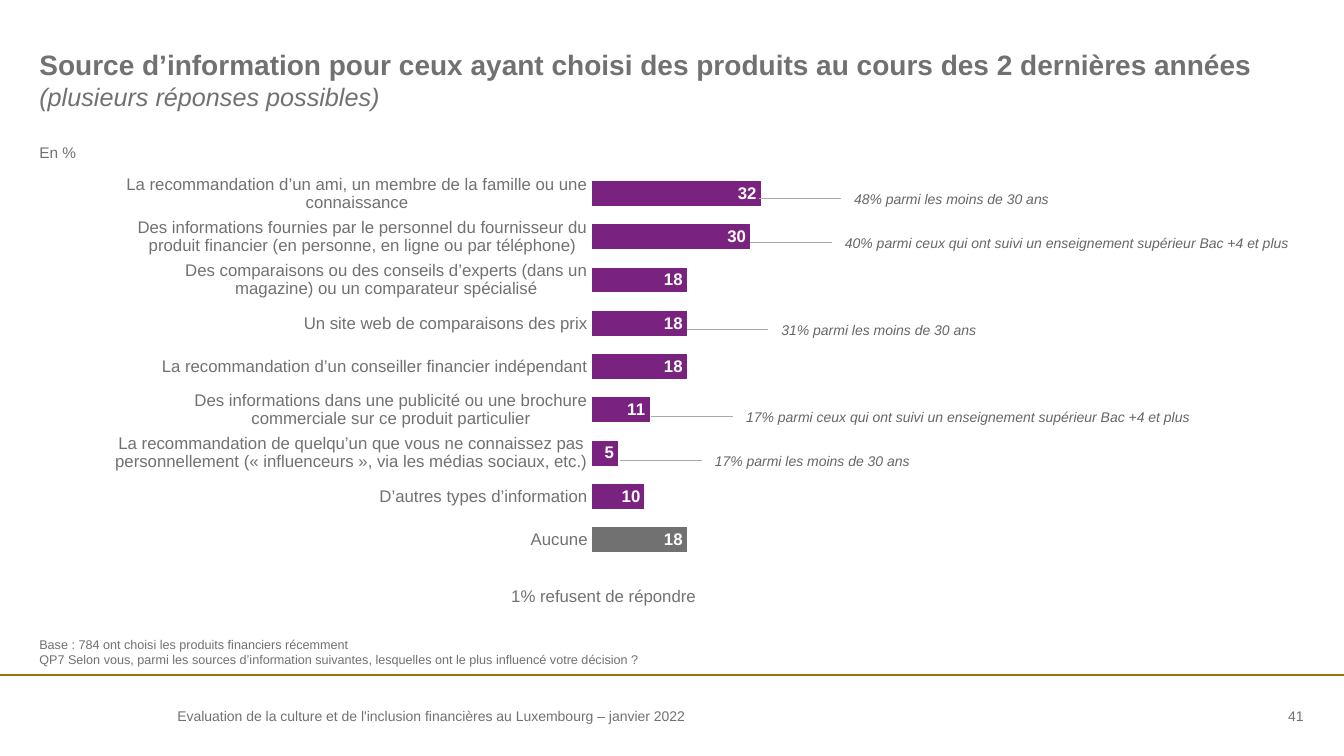
import pptx
import pptx.chart.data
import pptx.dml.color
import pptx.enum.chart
import pptx.enum.shapes
import pptx.enum.text
import pptx.oxml
import pptx.util
from pptx.util import Inches

RGBColor = pptx.dml.color.RGBColor
GREY = RGBColor(0x71, 0x71, 0x71)
NOTE_GREY = RGBColor(0x66, 0x66, 0x66)
LINE_GREY = RGBColor(0xAA, 0xAA, 0xAA)
PURPLE = RGBColor(0x7A, 0x22, 0x80)
GOLD = RGBColor(0x9C, 0x74, 0x08)
WHITE = RGBColor(0xFF, 0xFF, 0xFF)
ANCHOR = pptx.enum.text.MSO_ANCHOR
ALIGN = pptx.enum.text.PP_ALIGN

SOURCES = [
    ("La recommandation d’un ami, un membre de la famille ou une connaissance", 32),
    ("Des informations fournies par le personnel du fournisseur du produit financier "
     "(en personne, en ligne ou par téléphone)", 30),
    ("Des comparaisons ou des conseils d’experts (dans un magazine) "
     "ou un comparateur spécialisé", 18),
    ("Un site web de comparaisons des prix", 18),
    ("La recommandation d’un conseiller financier indépendant", 18),
    ("Des informations dans une publicité ou une brochure commerciale "
     "sur ce produit particulier", 11),
    ("La recommandation de quelqu’un que vous ne connaissez pas personnellement "
     "(« influenceurs », via les médias sociaux, etc.)", 5),
    ("D’autres types d’information", 10),
    ("Aucune", 18),
]
YOUNG = "parmi les moins de 30 ans"
GRADUATES = "parmi ceux qui ont suivi un enseignement supérieur Bac +4 et plus"
CALLOUTS = [
    (0, 7.53, 2.15, f"48% {YOUNG}"),
    (1, 7.44, 4.59, f"40% {GRADUATES}"),
    (3, 6.81, 2.15, f"31% {YOUNG}"),
    (5, 6.46, 4.59, f"17% {GRADUATES}"),
    (6, 6.15, 2.15, f"17% {YOUNG}"),
]


def style_font(font, size, color=GREY, bold=False, italic=False):
    font.name, font.size = "Arial", pptx.util.Pt(size)
    font.bold, font.italic = bold, italic
    font.color.rgb = color


def write(frame, *lines, anchor=ANCHOR.TOP, align=ALIGN.LEFT, insets=(0, 0, 0, 0), **style):
    frame.word_wrap = True
    frame.auto_size = pptx.enum.text.MSO_AUTO_SIZE.NONE
    frame.vertical_anchor = anchor
    (frame.margin_left, frame.margin_top,
     frame.margin_right, frame.margin_bottom) = map(Inches, insets)
    for index, line in enumerate(lines):
        paragraph = frame.add_paragraph() if index else frame.paragraphs[0]
        paragraph.alignment = align
        run = paragraph.add_run()
        run.text = line
        style_font(run.font, **style)


class SurveySlide:
    """Draws the elements of one survey slide in a shared style."""

    def __init__(self, slide):
        self.slide = slide
        self.shapes = slide.shapes

    def title(self, heading, remark, box):
        title = self.shapes.title
        title.left, title.top, title.width, title.height = map(Inches, box)
        write(title.text_frame, heading, size=20, bold=True)
        remark_run = title.text_frame.paragraphs[0].add_run()
        remark_run.text = remark
        style_font(remark_run.font, 18, italic=True)

    def text(self, box, *lines, **style):
        write(self.shapes.add_textbox(*map(Inches, box)).text_frame, *lines, **style)

    def line(self, start_x, end_x, y, color, width):
        line = self.shapes.add_connector(
            pptx.enum.shapes.MSO_CONNECTOR.STRAIGHT,
            Inches(start_x), Inches(y), Inches(end_x), Inches(y))
        line.line.color.rgb = color
        line.line.width = pptx.util.Pt(width)
        line._element.spPr.append(pptx.oxml.parse_xml(
            '<a:effectLst xmlns:a="http://schemas.openxmlformats.org/drawingml/2006/main"/>'))

    def callout(self, row, bar_end, width, remark):
        y = 1.97 + 0.433 * row
        self.line(bar_end + 0.81, bar_end, y, LINE_GREY, 1)
        self.text((bar_end + 0.9, y - 0.12, width, 0.25), remark, size=10, color=NOTE_GREY,
                  italic=True, insets=(0.04, 0.04, 0.08, 0.04))

    def bar_chart(self, box, sources):
        answers = pptx.chart.data.CategoryChartData()
        answers.categories = [source for source, _ in sources]
        answers.add_series("Series 1", [share for _, share in sources])
        chart = self.shapes.add_chart(pptx.enum.chart.XL_CHART_TYPE.BAR_CLUSTERED,
                                      *map(Inches, box), answers).chart
        chart.has_legend = chart.has_title = False
        style_font(chart.font, 10)

        source_axis, share_axis = chart.category_axis, chart.value_axis
        source_axis.reverse_order = True
        source_axis.major_tick_mark = pptx.enum.chart.XL_TICK_MARK.NONE
        source_axis.format.line.fill.background()
        style_font(source_axis.tick_labels.font, 12)
        share_axis.minimum_scale, share_axis.maximum_scale = 0, 90
        share_axis.has_major_gridlines = False
        share_axis.visible = False

        plot = chart.plots[0]
        plot.gap_width = 75
        plot.vary_by_categories = False
        bars = plot.series[0]
        bars.format.fill.solid()
        bars.format.fill.fore_color.rgb = PURPLE
        none_bar = bars.points[len(sources) - 1].format.fill
        none_bar.solid()
        none_bar.fore_color.rgb = GREY
        labels = bars.data_labels
        labels.show_value = True
        labels.position = pptx.enum.chart.XL_LABEL_POSITION.INSIDE_END
        style_font(labels.font, 12, WHITE, bold=True)
        self.place_plot(chart, x=0.508, y=0.019, w=0.497, h=0.971)

    def place_plot(self, chart, **fractions):
        area = chart._chartSpace.chart.plotArea
        for old in area.xpath("c:layout"):
            area.remove(old)
        modes = '<c:xMode val="edge"/><c:yMode val="edge"/>'
        sizes = "".join(f'<c:{key} val="{value}"/>' for key, value in fractions.items())
        area.insert(0, pptx.oxml.parse_xml(
            '<c:layout xmlns:c="http://schemas.openxmlformats.org/drawingml/2006/chart">'
            f'<c:manualLayout><c:layoutTarget val="inner"/>{modes}{sizes}'
            '</c:manualLayout></c:layout>'))


def main():
    deck = pptx.Presentation()
    deck.slide_width, deck.slide_height = Inches(13.33), Inches(7.5)
    survey = SurveySlide(deck.slides.add_slide(deck.slide_layouts[5]))
    survey.line(0, 13.33, 6.7, GOLD, 1.5)
    survey.text((1.66, 6.99, 5.35, 0.22),
                "Evaluation de la culture et de l'inclusion financières au Luxembourg – janvier 2022",
                size=10, anchor=ANCHOR.MIDDLE, insets=(0.1, 0.05, 0.1, 0.05))
    survey.title("Source d’information pour ceux ayant choisi des produits "
                 "au cours des 2 dernières années",
                 " (plusieurs réponses possibles)", (0.39, 0.47, 12.54, 0.44))
    survey.text((0.39, 6.32, 12.54, 0.3),
                "Base : 784 ont choisi les produits financiers récemment",
                "QP7 Selon vous, parmi les sources d’information suivantes, "
                "lesquelles ont le plus influencé votre décision ?",
                size=9, anchor=ANCHOR.BOTTOM)
    survey.bar_chart((1.1, 1.63, 9.48, 3.98), SOURCES)
    survey.text((5.07, 5.81, 1.88, 0.2), "1% refusent de répondre", size=12)
    survey.text((0.39, 1.42, 0.5, 0.19), "En %", size=11)
    for callout in CALLOUTS:
        survey.callout(*callout)
    survey.text((11.87, 6.99, 1.06, 0.22), "41", size=10,
                anchor=ANCHOR.MIDDLE, align=ALIGN.RIGHT)
    deck.save("out.pptx")


if __name__ == "__main__":
    main()
